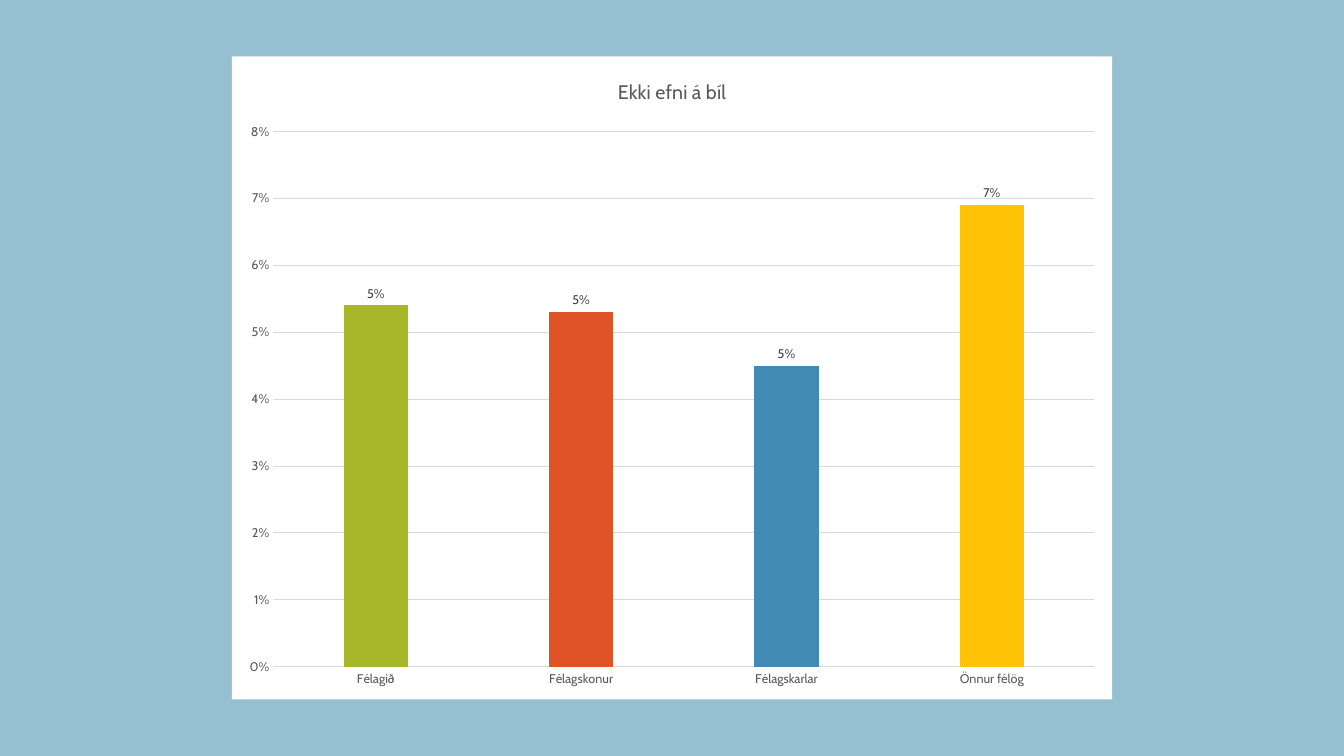
from lxml import etree
from pptx import Presentation
from pptx.chart.data import CategoryChartData
from pptx.dml.color import RGBColor
from pptx.enum import chart as chart_enum
from pptx.oxml import ns
from pptx.util import Inches, Pt

FONT = "Cabin"
BACKGROUND, PANEL, GRID = "96C0CF", "FFFFFF", "D9D9D9"
TITLE = "Ekki efni á bíl"
BARS = [  # category, share, colour
    ("Félagið", 0.054, "A6B727"),
    ("Félagskonur", 0.053, "DF5327"),
    ("Félagskarlar", 0.045, "418AB3"),
    ("Önnur félög", 0.069, "FEC306"),
]
CHART_BOX = (2.3, 0.56, 8.73, 6.38)
TITLE_TEXT = {"size": 14, "color": "595959"}
AXIS_TEXT = {"size": 9, "color": "595959"}
LABEL_TEXT = {"size": 9, "color": "404040"}


def paint(fill, color):
    fill.solid()
    fill.fore_color.rgb = RGBColor.from_string(color)


def style_font(font, size, color):
    for name, value in {"name": FONT, "size": Pt(size), "bold": False}.items():
        setattr(font, name, value)
    paint(font.fill, color)


def style_line(line, color):
    line.width = Pt(0.75)
    paint(line.fill, color)


def fill_chart_area(chart, color):
    """Give the whole chart a plain background without a border."""
    properties = etree.Element(ns.qn("c:spPr"))
    solid = etree.SubElement(properties, ns.qn("a:solidFill"))
    etree.SubElement(solid, ns.qn("a:srgbClr"), val=color)
    border = etree.SubElement(properties, ns.qn("a:ln"))
    etree.SubElement(border, ns.qn("a:noFill"))
    chart.element.find(ns.qn("c:chart")).addnext(properties)


def add_bar_chart(slide):
    data = CategoryChartData(number_format="0%")
    data.categories = [category for category, _, _ in BARS]
    data.add_series(TITLE, [share for _, share, _ in BARS])
    chart = slide.shapes.add_chart(
        chart_enum.XL_CHART_TYPE.COLUMN_CLUSTERED, *map(Inches, CHART_BOX), data
    ).chart
    style_font(chart.font, 10, "000000")
    fill_chart_area(chart, PANEL)
    chart.has_legend = False
    chart.has_title = True
    chart.chart_title.include_in_layout = False
    chart.chart_title.text_frame.text = TITLE
    title = chart.chart_title.text_frame.paragraphs[0]
    style_font(title.runs[0].font, **TITLE_TEXT)

    for axis in (chart.category_axis, chart.value_axis):
        axis.major_tick_mark = axis.minor_tick_mark = chart_enum.XL_TICK_MARK.NONE
        style_font(axis.tick_labels.font, **AXIS_TEXT)
    style_line(chart.category_axis.format.line, GRID)
    values = chart.value_axis
    for name, value in {"minimum_scale": 0, "maximum_scale": 0.08, "major_unit": 0.01}.items():
        setattr(values, name, value)
    values.format.line.fill.background()
    style_line(values.major_gridlines.format.line, GRID)
    values.tick_labels.number_format = "0%"
    values.tick_labels.number_format_is_linked = False

    plot = chart.plots[0]
    labels_format = {
        "show_value": True,
        "number_format": "0%",
        "number_format_is_linked": False,
        "position": chart_enum.XL_LABEL_POSITION.OUTSIDE_END,
    }
    for name, value in {"gap_width": 219, "overlap": -27, "vary_by_categories": False}.items():
        setattr(plot, name, value)
    series = plot.series[0]
    for name, value in labels_format.items():
        setattr(series.data_labels, name, value)
    style_font(series.data_labels.font, **LABEL_TEXT)
    paint(series.format.fill, BARS[0][2])
    for index, (_, _, color) in enumerate(BARS[1:], start=1):
        paint(series.points[index].format.fill, color)


def main():
    presentation = Presentation()
    presentation.slide_width, presentation.slide_height = Inches(13.33), Inches(7.5)
    slide = presentation.slides.add_slide(presentation.slide_layouts[6])
    paint(slide.background.fill, BACKGROUND)
    add_bar_chart(slide)
    presentation.save("out.pptx")


if __name__ == "__main__":
    main()
